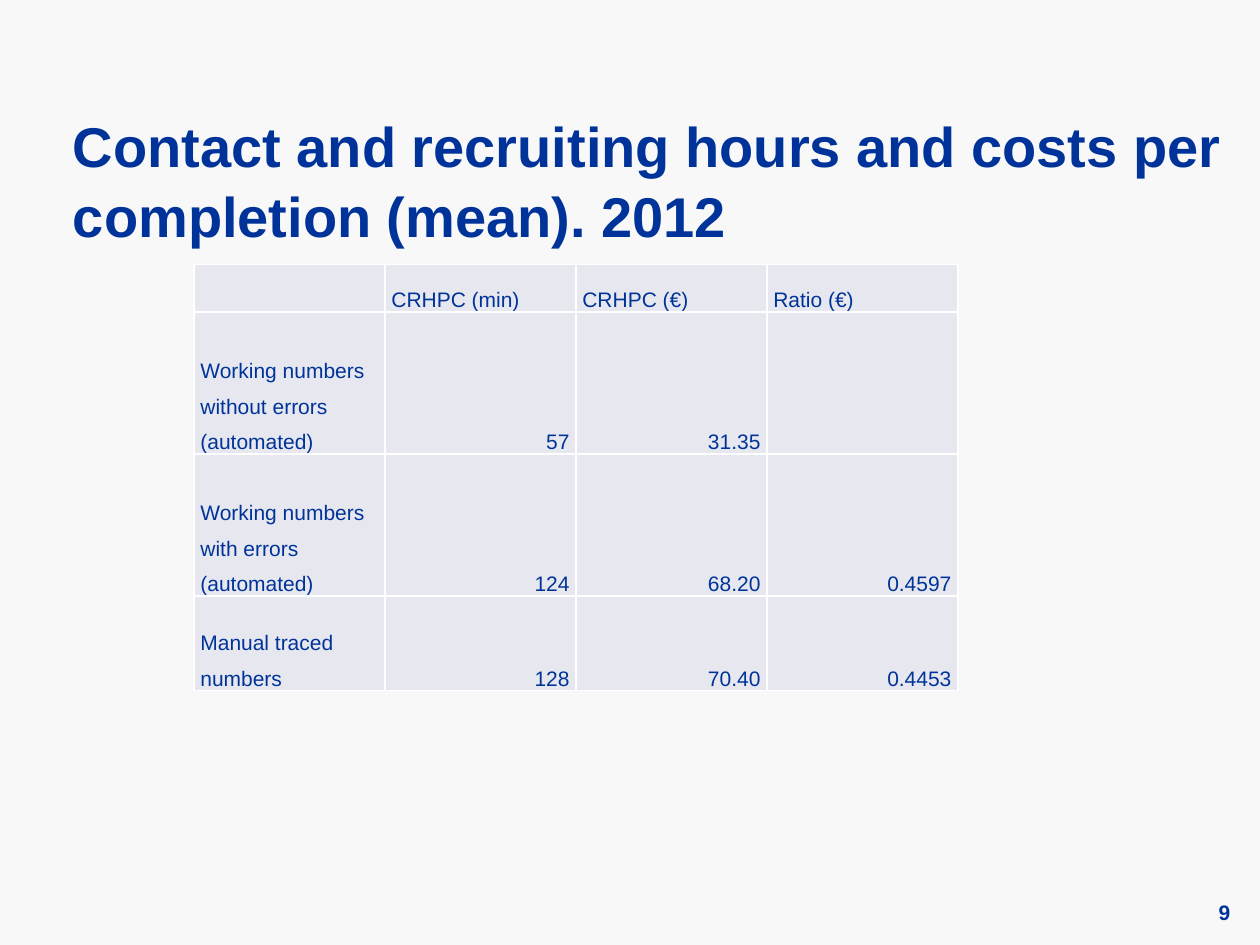
from pptx import Presentation
from pptx.dml.color import RGBColor as Rgb
from pptx.enum.text import MSO_ANCHOR as Anchor, MSO_AUTO_SIZE as AutoSize, PP_ALIGN as Align
from pptx.oxml import parse_xml
from pptx.oxml.ns import nsdecls
from pptx.util import Cm, Pt

COLORS = {"page": "F8F8F8", "ink": "003399", "cell": "E7E8EF", "border": "FFFFFF"}
COST_ROWS = [
    ("", "CRHPC (min)", "CRHPC (€)", "Ratio (€)"),
    ("Working numbers \vwithout errors (automated)", "57", "31.35", ""),
    ("Working numbers \vwith errors (automated)", "124", "68.20", "0.4597"),
    ("Manual traced \vnumbers", "128", "70.40", "0.4453"),
]
LINES_PER_ROW = (1, 3, 3, 2)
LINE_HEIGHT = 0.955
COLUMN_WIDTH = 3.85


def apply(target, values):
    for name, value in values.items():
        setattr(target, name, value)


class SlideBuilder:
    no_insets = {"margin_left": 0, "margin_top": 0, "margin_right": 0, "margin_bottom": 0}
    cell_format = {**no_insets, "margin_left": Cm(0.13), "margin_right": Cm(0.13),
                   "vertical_anchor": Anchor.BOTTOM}

    def __init__(self, slide):
        self.slide = slide
        self.fill(slide.background.fill, "page")

    def fill(self, fill, color):
        fill.solid()
        fill.fore_color.rgb = Rgb.from_string(COLORS[color])

    def style(self, frame, size, bold, **paragraph_format):
        for paragraph in frame.paragraphs:
            apply(paragraph, paragraph_format)
            for run in paragraph.runs:
                apply(run.font, {"name": "Arial", "size": Pt(size), "bold": bold})
                run.font.color.rgb = Rgb.from_string(COLORS["ink"])

    def place(self, shape, left, top, width, height):
        apply(shape, {"left": Cm(left), "top": Cm(top), "width": Cm(width), "height": Cm(height)})

    def title(self, text, *box):
        title = self.slide.shapes.title
        self.place(title, *box)
        title.text = text
        apply(title.text_frame, {**self.no_insets, "margin_top": Cm(0.08), "word_wrap": True,
                                 "auto_size": AutoSize.NONE, "vertical_anchor": Anchor.TOP})
        self.style(title.text_frame, 32, True, alignment=Align.LEFT, line_spacing=1.04)

    def page_number(self, text, *box):
        frame = self.slide.shapes.add_textbox(*map(Cm, box)).text_frame
        frame.text = text
        apply(frame, {**self.no_insets, "word_wrap": True, "vertical_anchor": Anchor.MIDDLE})
        self.style(frame, 12, True, alignment=Align.RIGHT)

    def borders(self, cell):
        properties = cell._tc.get_or_add_tcPr()
        for index, side in enumerate(("lnL", "lnR", "lnT", "lnB")):
            properties.insert(index, parse_xml(
                f'<a:{side} {nsdecls("a")} w="12700"><a:solidFill>'
                f'<a:srgbClr val="{COLORS["border"]}"/></a:solidFill></a:{side}>'))

    def table(self, rows, lines_per_row, left, top):
        columns = len(rows[0])
        heights = [LINE_HEIGHT * lines for lines in lines_per_row]
        table = self.slide.shapes.add_table(
            len(rows), columns, Cm(left), Cm(top),
            Cm(COLUMN_WIDTH * columns), Cm(sum(heights))).table
        apply(table, {"first_row": False, "horz_banding": False})
        for row, height in zip(table.rows, heights):
            row.height = Cm(height)
        for r, values in enumerate(rows):
            for c, value in enumerate(values):
                cell = table.cell(r, c)
                apply(cell, self.cell_format)
                self.fill(cell.fill, "cell")
                self.borders(cell)
                if value:
                    cell.text = value
                    alignment = Align.RIGHT if r and c else Align.LEFT
                    self.style(cell.text_frame, 12, False, alignment=alignment, line_spacing=1.5)


def main():
    deck = Presentation()
    apply(deck, {"slide_width": Cm(25.4), "slide_height": Cm(19.05)})
    builder = SlideBuilder(deck.slides.add_slide(deck.slide_layouts[5]))
    builder.title("Contact and recruiting hours and costs per completion (mean). 2012",
                  1.47, 2.11, 23.29, 2.34)
    builder.table(COST_ROWS, LINES_PER_ROW, 3.91, 5.33)
    builder.page_number("9", 23.5, 18.06, 1.3, 0.66)
    deck.save("out.pptx")


if __name__ == "__main__":
    main()
